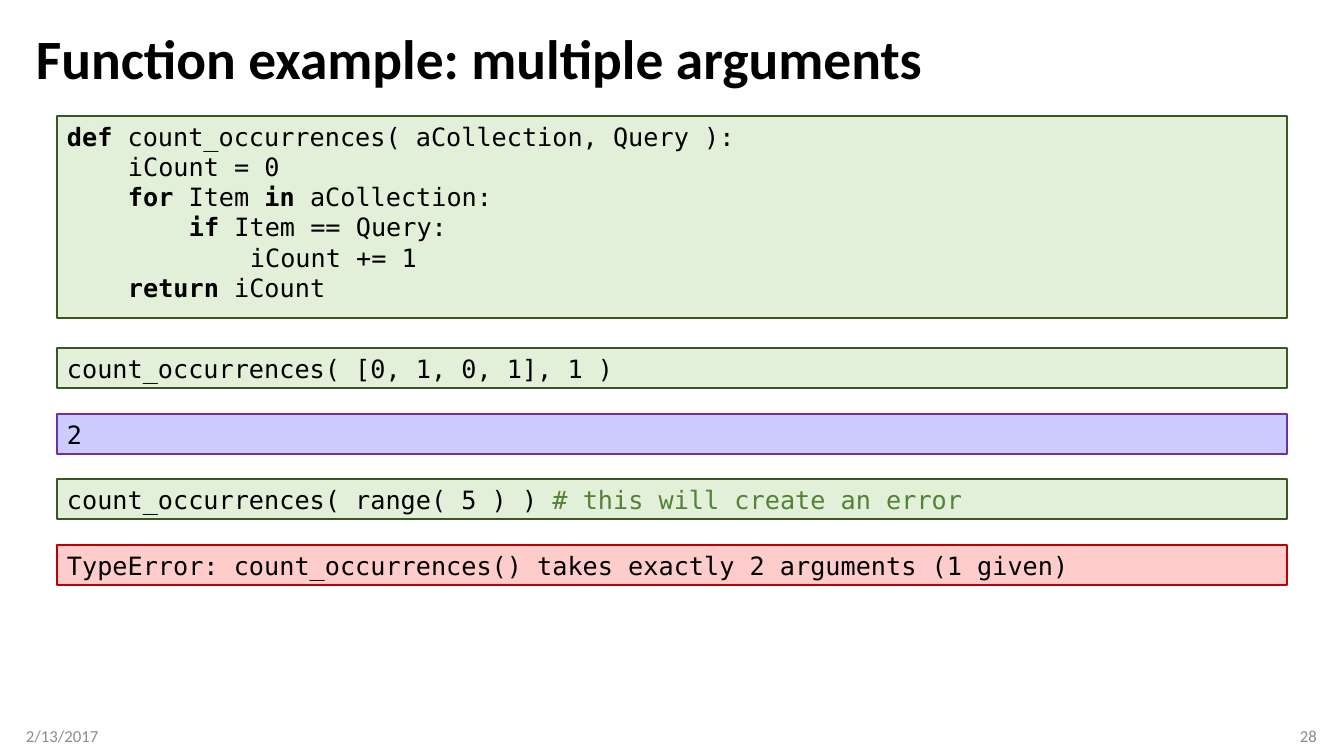
import pptx
import pptx.util
import pptx.dml.color
import pptx.enum.shapes
import pptx.enum.text
from dataclasses import dataclass

ALIGN = pptx.enum.text.PP_ALIGN
ANCHOR = pptx.enum.text.MSO_ANCHOR


@dataclass(frozen=True)
class Theme:
    heading_font: str = "Calibri"
    code_font: str = "DejaVu Sans Mono"
    title_size: float = 39.6
    code_size: float = 18
    footer_size: float = 12
    ink: str = "000000"
    muted: str = "8C8C8C"
    comment: str = "548235"
    code_colors: tuple = ("E2F0D9", "385723")
    output_colors: tuple = ("CCCCFF", "7030A0")
    error_colors: tuple = ("FFCCCC", "C00000")


THEME = Theme()
INSET = 10
INDENT = 61


def px(length):
    return pptx.util.Emu(round(length * 914400 / 100.8))


def rgb(value):
    return pptx.dml.color.RGBColor.from_string(value)


def write(frame, lines, *, font, size, color=THEME.ink, bold=False,
          align=ALIGN.LEFT, anchor=ANCHOR.MIDDLE, spacing=None,
          left=INSET, right=INSET):
    frame.word_wrap = True
    frame.auto_size = pptx.enum.text.MSO_AUTO_SIZE.NONE
    frame.vertical_anchor = anchor
    frame.margin_left, frame.margin_right = px(left), px(right)
    frame.margin_top = frame.margin_bottom = px(5)
    for index, (level, pieces) in enumerate(lines):
        paragraph = frame.add_paragraph() if index else frame.paragraphs[0]
        paragraph.alignment = align
        paragraph.line_spacing = spacing
        if level:
            properties = paragraph._p.get_or_add_pPr()
            properties.set("marL", str(px(level * INDENT)))
            properties.set("indent", "0")
        for wording, style in pieces:
            run = paragraph.add_run()
            run.text = wording
            run.font.name = font
            run.font.size = pptx.util.Pt(size)
            run.font.bold = style.get("bold", bold)
            run.font.color.rgb = rgb(style.get("color", color))


def plain(wording):
    return [(0, [(wording, {})])]


def add_title(slide, box, wording):
    title = slide.shapes.title
    title.left, title.top, title.width, title.height = map(px, box)
    write(title.text_frame, plain(wording), font=THEME.heading_font,
          size=THEME.title_size, bold=True, spacing=0.9)


def add_panel(slide, box, lines, colors, anchor=ANCHOR.MIDDLE):
    panel = slide.shapes.add_shape(
        pptx.enum.shapes.MSO_SHAPE.RECTANGLE, *map(px, box))
    panel.shadow.inherit = False
    fill, border = colors
    panel.fill.solid()
    panel.fill.fore_color.rgb = rgb(fill)
    panel.line.color.rgb = rgb(border)
    panel.line.width = pptx.util.Pt(1)
    write(panel.text_frame, lines, font=THEME.code_font,
          size=THEME.code_size, anchor=anchor)


def add_session(slide, box, definition, exchanges):
    left, top, width, height = box
    definition_height, row_height = 202, 40
    add_panel(slide, (left, top, width, definition_height), definition,
              THEME.code_colors, ANCHOR.TOP)
    first_row = top + definition_height + 30
    pitch = (top + height - row_height - first_row) / (len(exchanges) - 1)
    for index, (lines, colors) in enumerate(exchanges):
        row_top = round(first_row + index * pitch)
        add_panel(slide, (left, row_top, width, row_height), lines, colors)


def add_footer(slide, box, date, number):
    left, top, width, height = box
    field_width = 302
    fields = ((date, left, ALIGN.LEFT, 0, INSET),
              (number, left + width - field_width, ALIGN.RIGHT, INSET, 0))
    for wording, field_left, align, inset_left, inset_right in fields:
        field = slide.shapes.add_textbox(
            *map(px, (field_left, top, field_width, height)))
        write(field.text_frame, plain(wording), font=THEME.heading_font,
              size=THEME.footer_size, color=THEME.muted, align=align,
              left=inset_left, right=inset_right)


def main():
    keyword = {"bold": True}
    definition = [
        (0, [("def ", keyword), ("count_occurrences( aCollection, Query ):", {})]),
        (1, [("iCount = 0", {})]),
        (1, [("for", keyword), (" Item ", {}), ("in ", keyword),
             ("aCollection:", {})]),
        (2, [("if", keyword), (" Item == Query:", {})]),
        (3, [("iCount += 1", {})]),
        (1, [("return", keyword), (" iCount", {})]),
    ]
    failing_call = [(0, [("count_occurrences( range( 5 ) ) ", {}),
                         ("# this will create an error",
                          {"color": THEME.comment})])]
    exchanges = [
        (plain("count_occurrences( [0, 1, 0, 1], 1 )"), THEME.code_colors),
        (plain("2"), THEME.output_colors),
        (failing_call, THEME.code_colors),
        (plain("TypeError: count_occurrences() takes exactly 2 arguments (1 given)"),
         THEME.error_colors),
    ]

    deck = pptx.Presentation()
    deck.slide_width, deck.slide_height = px(1344), px(756)
    slide = deck.slides.add_slide(deck.slide_layouts[5])
    add_title(slide, (26, 25, 1291, 73), "Function example: multiple arguments")
    add_footer(slide, (26, 716, 1291, 40), "2/13/2017", "28")
    add_session(slide, (57, 116, 1230, 469), definition, exchanges)
    deck.save("out.pptx")


if __name__ == "__main__":
    main()
